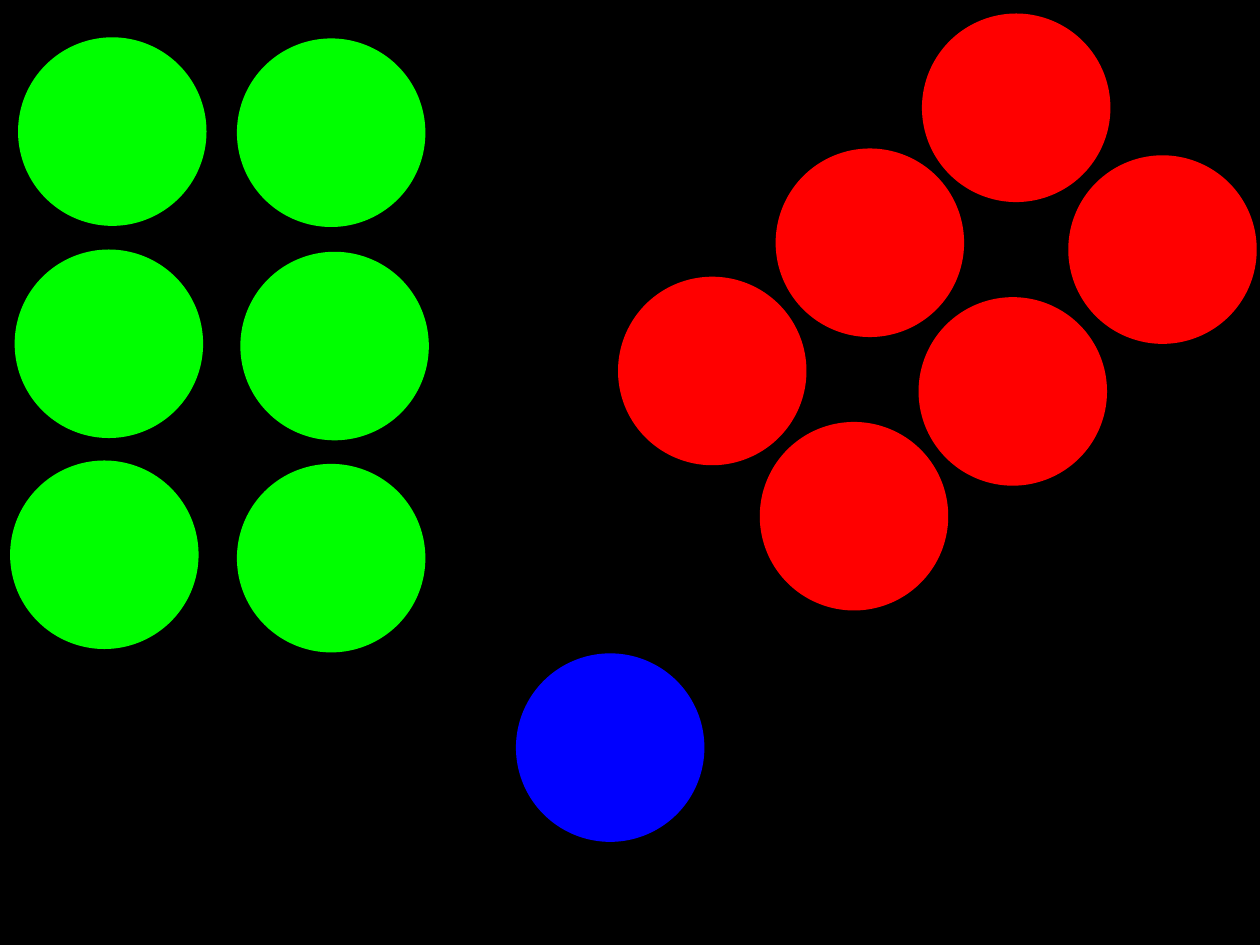
from pptx import Presentation
from pptx.dml.color import RGBColor
from pptx.enum.shapes import MSO_SHAPE
from pptx.util import Inches, Pt

SLIDE_WIDTH, SLIDE_HEIGHT = 11.11, 8.33
DIAMETER = 1.62

GREEN_ORIGIN = (0.11, 0.35)
GREEN_OFFSETS = [
    (0.07, 0), (2, 0.01),
    (0.04, 1.87), (2.03, 1.89),
    (0, 3.73), (2, 3.76),
]
RED_ORIGIN = (5.47, 0.14)
RED_OFFSETS = [
    (2.68, 0), (1.39, 1.19), (0, 2.32),
    (3.97, 1.25), (2.65, 2.5), (1.25, 3.6),
]
BLUE_ORIGIN = (4.57, 5.78)


def paint(fill, color):
    fill.solid()
    fill.fore_color.rgb = RGBColor.from_string(color)


def add_circle(page, left, top, color):
    circle = page.shapes.add_shape(
        MSO_SHAPE.OVAL, Inches(left), Inches(top), Inches(DIAMETER), Inches(DIAMETER))
    circle.shadow.inherit = False
    paint(circle.fill, color)
    paint(circle.line.fill, color)
    circle.line.width = Pt(3)


def add_circle_group(page, origin, offsets, color):
    left, top = origin
    for across, down in offsets:
        add_circle(page, left + across, top + down, color)


def main():
    deck = Presentation()
    deck.slide_width = Inches(SLIDE_WIDTH)
    deck.slide_height = Inches(SLIDE_HEIGHT)
    page = deck.slides.add_slide(deck.slide_layouts.get_by_name("Blank"))
    paint(page.background.fill, "000000")
    add_circle_group(page, GREEN_ORIGIN, GREEN_OFFSETS, "00FF00")
    add_circle_group(page, RED_ORIGIN, RED_OFFSETS, "FF0000")
    add_circle_group(page, BLUE_ORIGIN, [(0, 0)], "0000FF")
    deck.save("out.pptx")


if __name__ == "__main__":
    main()
